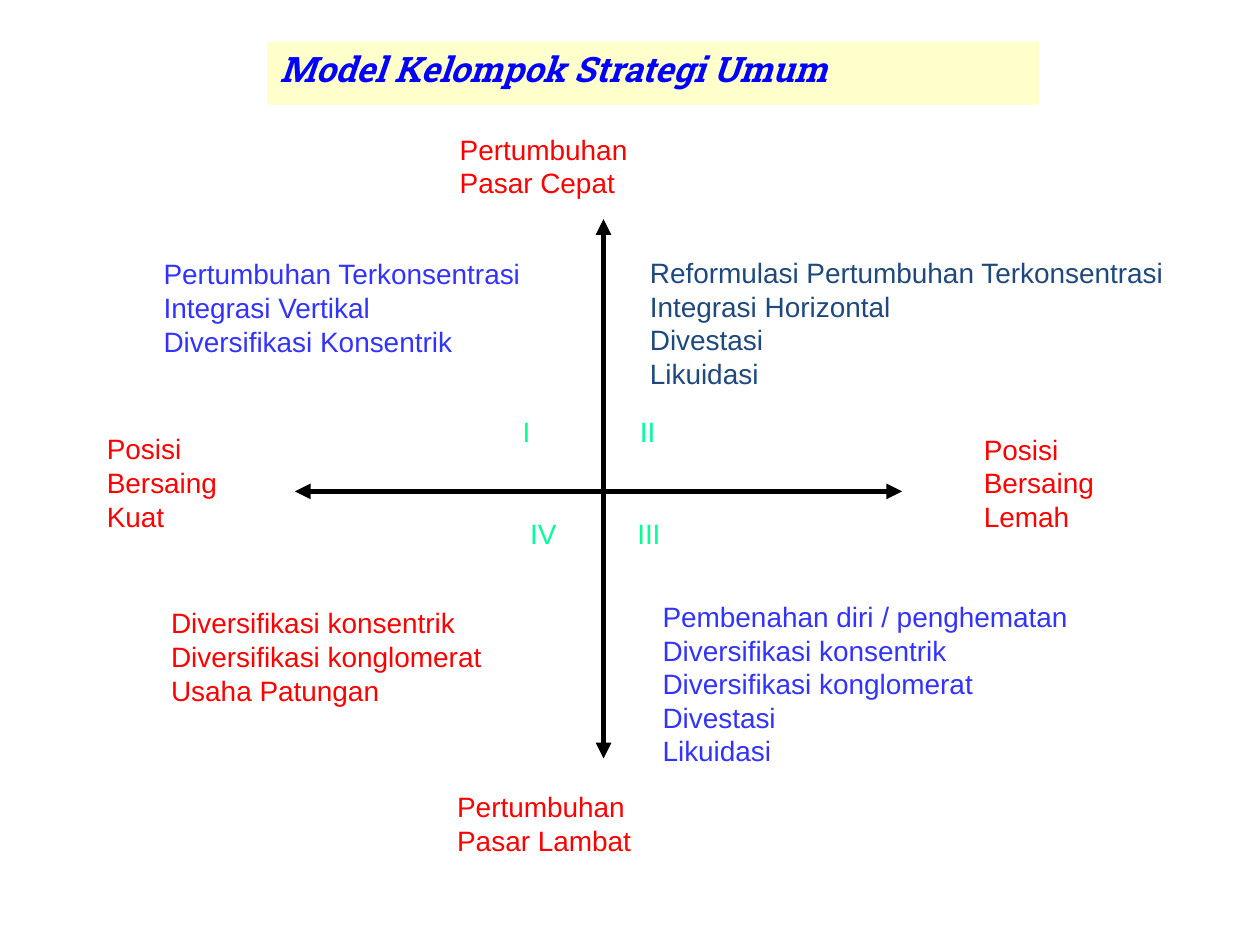
from lxml import etree
from pptx import Presentation
from pptx.dml.color import RGBColor
from pptx.enum import shapes, text
from pptx.oxml import ns
from pptx.util import Inches, Pt

THEME = {
    "title": {"name": "Roboto Slab", "size": Pt(20), "bold": True, "italic": True},
    "label": {"name": "Arial", "size": Pt(16)},
    "blue": RGBColor(0x00, 0x00, 0xFF),
    "cream": RGBColor(0xFF, 0xFF, 0xCC),
    "red": RGBColor(0xFF, 0x00, 0x00),
    "navy": RGBColor(0x1F, 0x49, 0x7D),
    "violet": RGBColor(0x33, 0x33, 0xFF),
    "green": RGBColor(0x00, 0xFF, 0x99),
    "black": RGBColor(0x00, 0x00, 0x00),
    "axis_width": Pt(3),
}
LEFT, JUSTIFY = text.PP_ALIGN.LEFT, text.PP_ALIGN.JUSTIFY


def write_lines(tf, lines, style, color, align):
    """Fill a text frame with one formatted paragraph per line."""
    tf.word_wrap = True
    tf.auto_size = text.MSO_AUTO_SIZE.NONE
    tf.vertical_anchor = text.MSO_ANCHOR.TOP
    for i, line in enumerate(lines):
        p = tf.add_paragraph() if i else tf.paragraphs[0]
        p.alignment = align
        r = p.add_run()
        r.text = line
        for key, value in THEME[style].items():
            setattr(r.font, key, value)
        r.font.color.rgb = THEME[color]


prs = Presentation()
prs.slide_width, prs.slide_height = Inches(10), Inches(7.5)
s = prs.slides.add_slide(prs.slide_layouts[5])

# Title band
title = s.shapes.title
title.left, title.top = Inches(2.12), Inches(0.33)
title.width, title.height = Inches(6.13), Inches(0.5)
title.fill.solid()
title.fill.fore_color.rgb = THEME["cream"]
write_lines(title.text_frame, ["Model Kelompok Strategi Umum"], "title", "blue", LEFT)

# Axes with an arrowhead at each end
axis_x, axis_y = 4.79, 3.9
for x1, y1, x2, y2 in [(axis_x, 1.74, axis_x, 6.02), (2.34, axis_y, 7.16, axis_y)]:
    axis = s.shapes.add_connector(
        shapes.MSO_CONNECTOR.STRAIGHT, Inches(x1), Inches(y1), Inches(x2), Inches(y2))
    axis.line.color.rgb = THEME["black"]
    axis.line.width = THEME["axis_width"]
    ln = axis.line._get_or_add_ln()
    for end in ("a:headEnd", "a:tailEnd"):
        etree.SubElement(ln, ns.qn(end), type="triangle")
    etree.SubElement(axis._element.spPr, ns.qn("a:effectLst"))

# Axis labels, quadrant strategies and quadrant numbers
labels = [
    (3.55, 1, 2.41, 0.74, "red", LEFT, ["Pertumbuhan", "Pasar Cepat"]),
    (3.53, 6.22, 2.41, 0.61, "red", LEFT, ["Pertumbuhan", "Pasar Lambat"]),
    (0.75, 3.38, 1.4, 1.07, "red", JUSTIFY, ["Posisi", "Bersaing", "Kuat"]),
    (7.71, 3.38, 1.67, 0.98, "red", JUSTIFY, ["Posisi", "Bersaing", "Lemah"]),
    (1.2, 1.99, 3.34, 1.1, "violet", JUSTIFY,
     ["Pertumbuhan Terkonsentrasi", "Integrasi Vertikal", "Diversifikasi Konsentrik"]),
    (5.06, 1.98, 4.6, 1.25, "navy", JUSTIFY,
     ["Reformulasi Pertumbuhan Terkonsentrasi", "Integrasi Horizontal",
      "Divestasi", "Likuidasi"]),
    (5.16, 4.71, 4.25, 1.52, "violet", JUSTIFY,
     ["Pembenahan diri / penghematan", "Diversifikasi konsentrik",
      "Diversifikasi konglomerat", "Divestasi", "Likuidasi"]),
    (1.26, 4.76, 3.34, 1.02, "red", JUSTIFY,
     ["Diversifikasi konsentrik", "Diversifikasi konglomerat", "Usaha Patungan"]),
]
numbers = [("I", 4.05, 3.24), ("II", 4.98, 3.24), ("III", 4.96, 4.05), ("IV", 4.11, 4.05)]
labels += [(x, y, 0.56, 0.64, "green", LEFT, [number]) for number, x, y in numbers]

for x, y, w, h, color, align, lines in labels:
    sp = s.shapes.add_textbox(Inches(x), Inches(y), Inches(w), Inches(h))
    write_lines(sp.text_frame, lines, "label", color, align)

prs.save("out.pptx")
